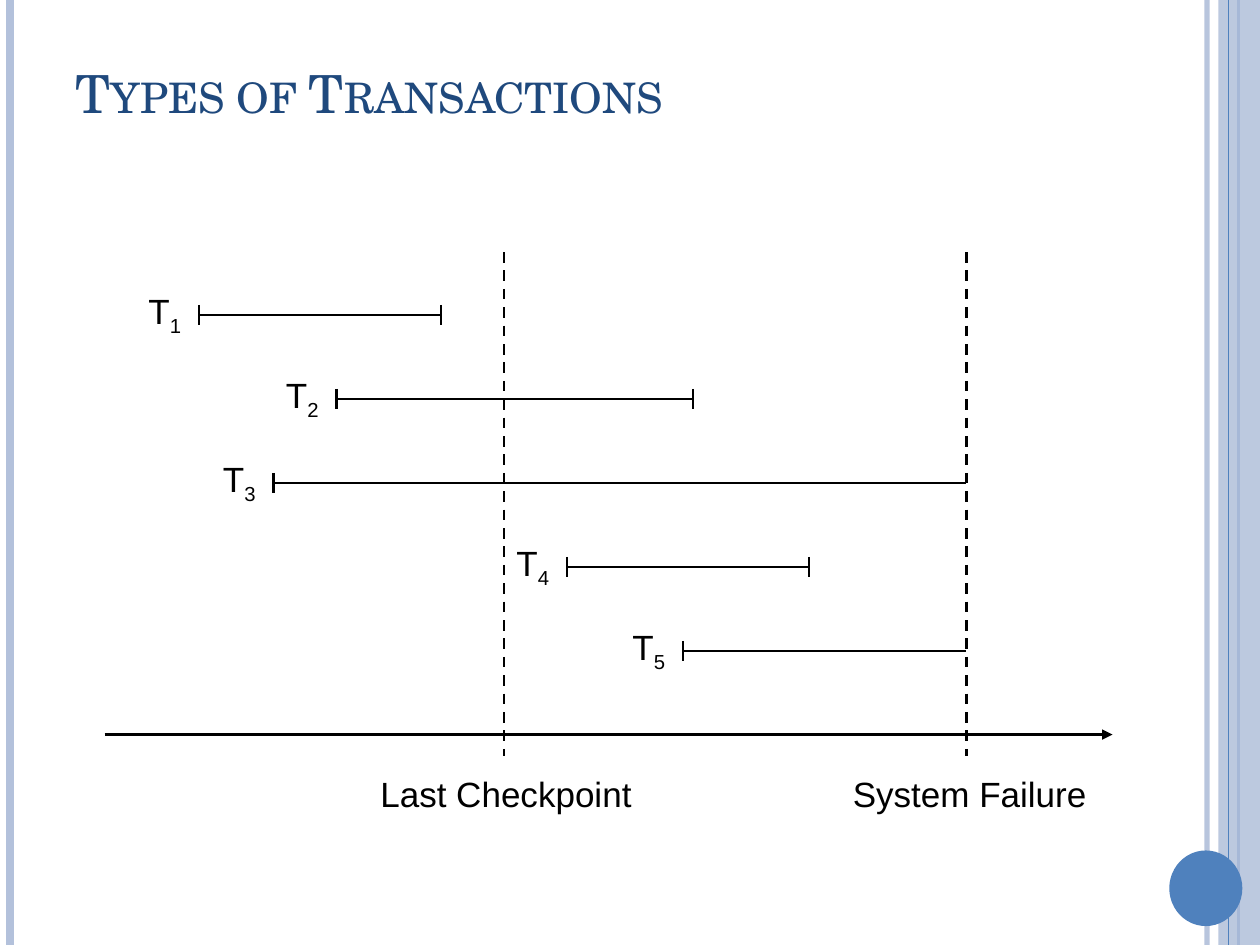
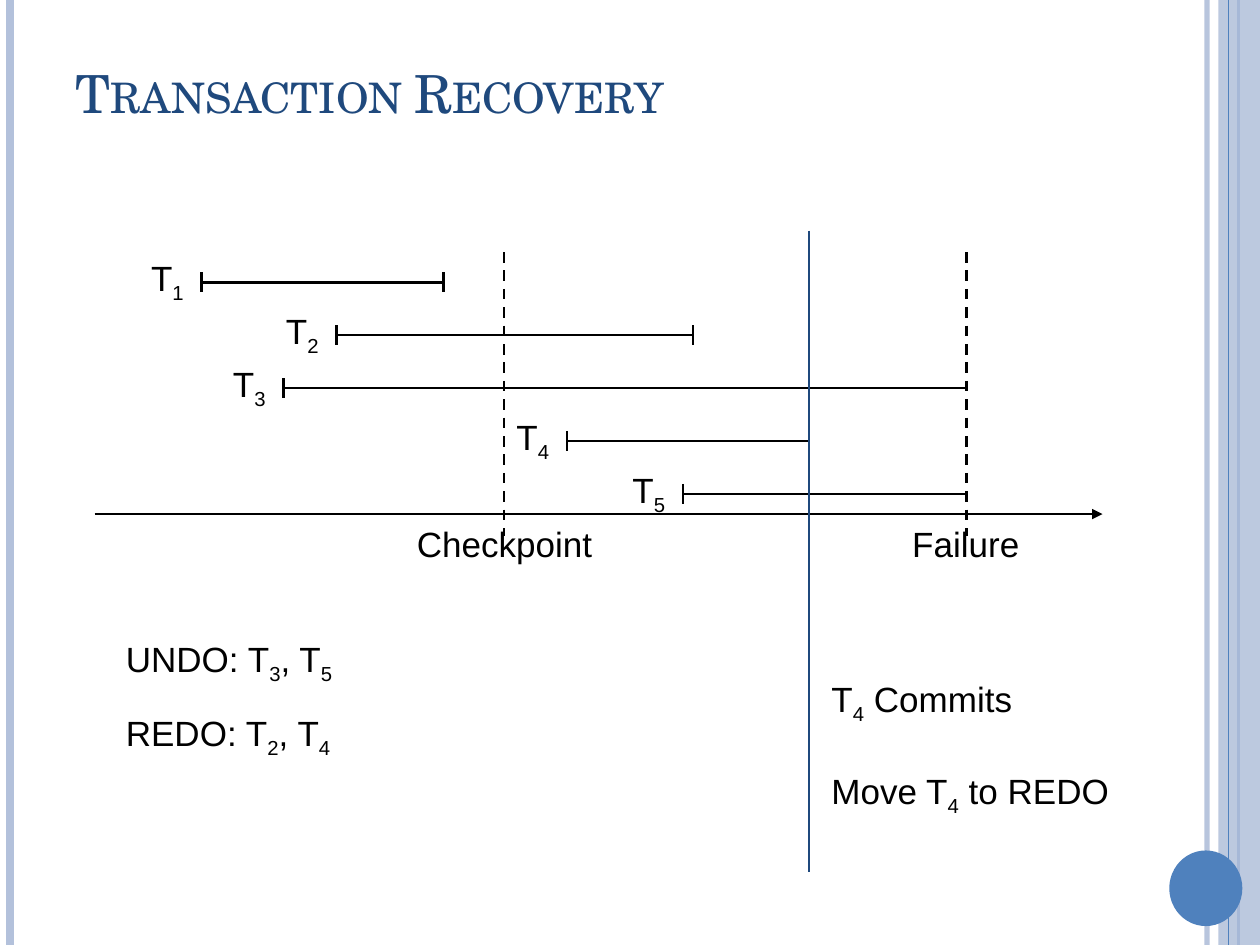
from lxml.etree import SubElement
from pptx import Presentation
from pptx.dml.color import RGBColor
from pptx.enum.dml import MSO_LINE
from pptx.enum.shapes import MSO_CONNECTOR, MSO_SHAPE
from pptx.enum.text import MSO_ANCHOR, MSO_AUTO_SIZE, PP_ALIGN
from pptx.oxml.ns import qn
from pptx.util import Inches, Pt

BLACK = RGBColor(0x00, 0x00, 0x00)
NAVY = RGBColor(0x1F, 0x49, 0x7D)
BLUE = RGBColor(0x4F, 0x81, 0xBD)
PALE = RGBColor(0xB3, 0xC1, 0xDB)
HEAD = "TeX Gyre Schola"
BODY = "Arial"
CHECK = 4
FAIL = 7.67
COMMIT = 6.42
CAP = 0.08


class Deck:
    def __init__(self):
        self.file = Presentation()
        self.file.slide_width = Inches(10)
        self.file.slide_height = Inches(7.5)
        self.base = self.file.slide_layouts[5]
        self.slide = None

    def start(self, title):
        self.slide = self.file.slides.add_slide(self.base)
        if len(self.file.slides) == 1:
            self.frame()
        head = self.slide.shapes.title
        head.left, head.top = Inches(0.5), Inches(0.3)
        head.width, head.height = Inches(8.67), Inches(0.87)
        head.text_frame.text = title
        head.text_frame.vertical_anchor = MSO_ANCHOR.MIDDLE
        para = head.text_frame.paragraphs[0]
        para.alignment = PP_ALIGN.LEFT
        self.style(para, HEAD, 30, NAVY)
        para.font._element.set("cap", "small")

    def frame(self):
        parts = [
            self.line(9.58, 0, 9.58, 7.5, PALE, 3, alpha=93),
            self.line(0.08, 0, 0.08, 7.5, PALE, 4.5),
            self.line(9.83, 0, 9.83, 7.5, BLUE, 1.5),
            self.shape(MSO_SHAPE.RECTANGLE, 9.67, 0, 0.33, 7.5, PALE, 87),
            self.line(9.75, 0, 9.75, 7.5, BLUE, 0.75),
            self.shape(MSO_SHAPE.OVAL, 9.28, 6.75, 0.58, 0.6, BLUE),
        ]
        for part in parts:
            self.base.shapes.element.append(part.element)

    def style(self, para, name, size, color):
        para.font.name = name
        para.font.size = Pt(size)
        para.font.color.rgb = color

    def fade(self, item, alpha):
        for color in item.element.iter(qn("a:srgbClr")):
            SubElement(color, qn("a:alpha")).set("val", str(alpha * 1000))

    def line(self, x1, y1, x2, y2, color=BLACK, width=1.5, dash=False,
             arrow=False, alpha=None):
        item = self.slide.shapes.add_connector(
            MSO_CONNECTOR.STRAIGHT,
            Inches(x1), Inches(y1), Inches(x2), Inches(y2))
        item.line.color.rgb = color
        item.line.width = Pt(width)
        if dash:
            item.line.dash_style = MSO_LINE.DASH
        props = item.element.spPr
        if arrow:
            SubElement(props.find(qn("a:ln")), qn("a:tailEnd")).set("type", "triangle")
        SubElement(props, qn("a:effectLst"))
        if alpha:
            self.fade(item, alpha)
        return item

    def shape(self, kind, x, y, w, h, color, alpha=None):
        item = self.slide.shapes.add_shape(
            kind, Inches(x), Inches(y), Inches(w), Inches(h))
        item.shadow.inherit = False
        item.fill.solid()
        item.fill.fore_color.rgb = color
        item.line.fill.background()
        if alpha:
            self.fade(item, alpha)
        return item

    def text(self, x, y, w, *lines, h=0.44, wrap=False, align=PP_ALIGN.LEFT, gap=0):
        box = self.slide.shapes.add_textbox(
            Inches(x), Inches(y), Inches(w), Inches(h)).text_frame
        box.word_wrap = wrap
        box.auto_size = MSO_AUTO_SIZE.SHAPE_TO_FIT_TEXT
        for row, words in enumerate(lines):
            para = box.add_paragraph() if row else box.paragraphs[0]
            para.alignment = align
            if row:
                para.space_before = Pt(gap)
            self.style(para, BODY, 20, BLACK)
            for spot, word in enumerate(words.split("|")):
                run = para.add_run()
                run.text = word
                if spot % 2:
                    run.font._element.set("baseline", "-25000")

    def axis(self, left, y, foot):
        for x in (CHECK, FAIL):
            self.line(x, 2, x, foot, dash=True)
        self.line(left, y, left + 8, y, arrow=True)

    def spans(self, top, step, spans, open_ends):
        for row, (left, right) in enumerate(spans):
            y = top + row * step
            self.line(left, y, right, y)
            for x in (left, right):
                if x not in open_ends:
                    self.line(x, y - CAP, x, y + CAP)
            self.text(left - 0.5, y - 0.25, 0.48, f"T|{row + 1}")


def types(deck):
    deck.start("Types of Transactions")
    deck.text(2.92, 6.08, 2.21, "Last Checkpoint")
    deck.text(6.67, 6.08, 2.07, "System Failure")
    deck.axis(0.83, 5.83, 6)
    deck.spans(2.5, 2 / 3, [(1.58, 3.5), (2.67, 5.5), (2.17, FAIL),
                            (4.5, COMMIT), (5.42, FAIL)], [FAIL])


def redo(deck):
    deck.start("Transaction Recovery")
    deck.axis(0.75, 4.08, 4.25)
    deck.spans(2.24, 0.42, [(1.6, 3.52), (2.67, 5.5), (2.25, FAIL),
                            (4.5, COMMIT), (5.42, FAIL)], [FAIL, COMMIT])
    deck.text(3.2, 4.1, 1.61, "Checkpoint", align=PP_ALIGN.CENTER)
    deck.text(7.14, 4.1, 1.05, "Failure", align=PP_ALIGN.CENTER)
    deck.text(0.9, 5.01, 3.02, "UNDO: T|3|, T|5", wrap=True)
    deck.text(0.9, 5.6, 1.85, "REDO: T|2|, T|4")
    deck.line(COMMIT, 1.83, COMMIT, 6.92, NAVY)
    deck.text(6.5, 5.33, 2.42, "T|4| Commits", "Move T|4| to REDO",
              h=1.1, wrap=True, gap=25)


def main():
    deck = Deck()
    types(deck)
    redo(deck)
    deck.file.save("out.pptx")


if __name__ == "__main__":
    main()
